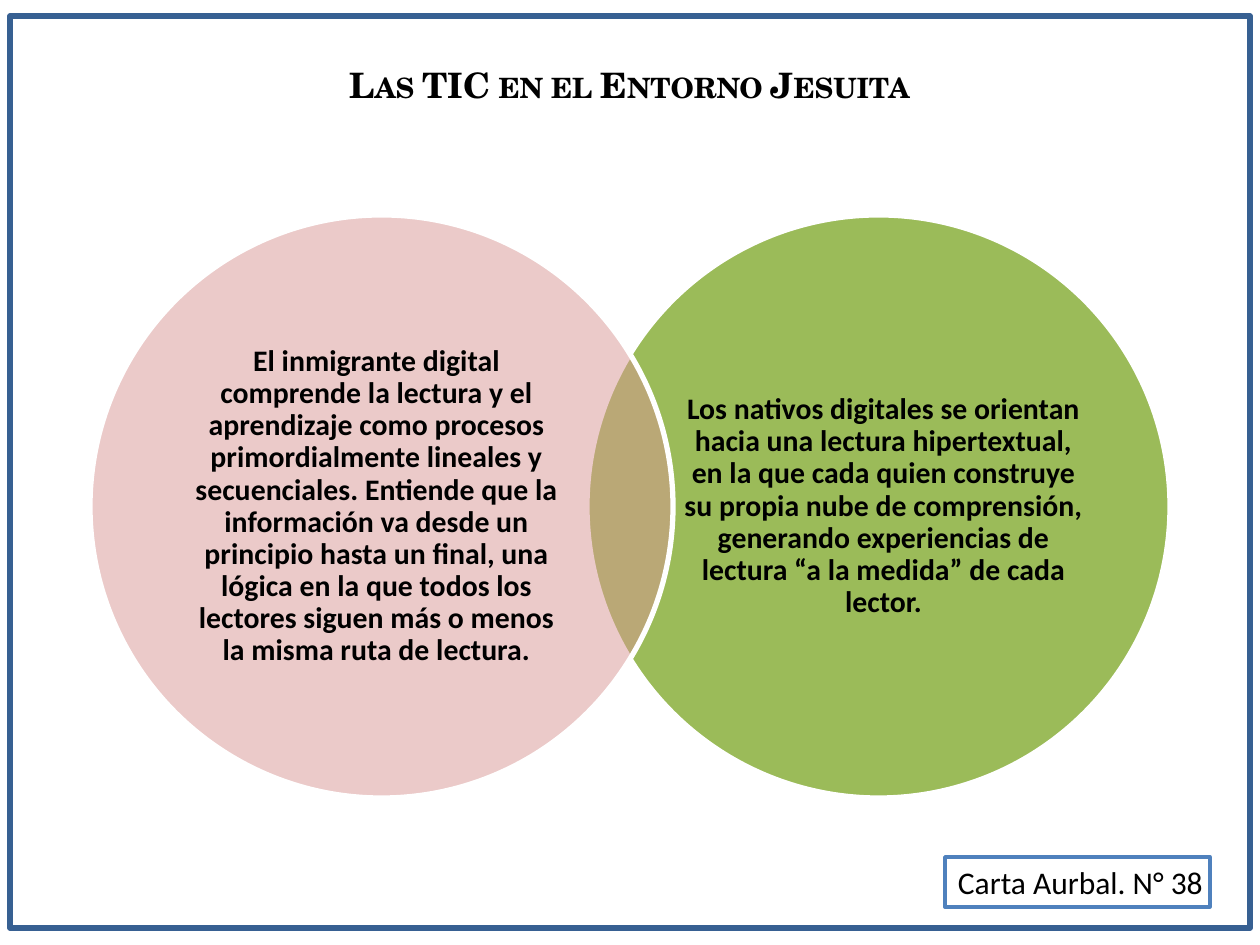
"""Build a slide contrasting two kinds of digital readers in overlapping circles."""
from dataclasses import dataclass

from lxml import etree
from pptx import Presentation
from pptx.dml.color import RGBColor
from pptx.enum.shapes import MSO_SHAPE
from pptx.enum.text import MSO_ANCHOR, PP_ALIGN
from pptx.oxml.ns import qn
from pptx.util import Pt

RECTANGLE, OVAL = MSO_SHAPE.RECTANGLE, MSO_SHAPE.OVAL
TOP, MIDDLE = MSO_ANCHOR.TOP, MSO_ANCHOR.MIDDLE
LEFT, CENTER = PP_ALIGN.LEFT, PP_ALIGN.CENTER
EMU_PER_PX = 914400 / 126


@dataclass(frozen=True)
class Theme:
    ink: str = "000000"
    paper: str = "FFFFFF"
    frame: str = "376092"
    source: str = "4F81BD"
    native: str = "9BBB59"
    immigrant: str = "D99694"
    title_font: str = "TeX Gyre Schola"
    body_font: str = "Calibri"
    title_size: int = 20
    source_size: int = 18
    circle_size: int = 17


THEME = Theme()
TITLE = "Las TIC en el Entorno Jesuita"
SOURCE = "Carta Aurbal. N° 38"
READERS = [
    {
        "column": 1,
        "color": THEME.native,
        "opacity": 100,
        "insets": (10, 5, 0, 5),
        "text": "Los nativos digitales se orientan hacia una lectura hipertextual, "
                "en la que cada quien construye su propia nube de comprensión, "
                "generando experiencias de lectura “a la medida” de cada lector.",
    },
    {
        "column": 0,
        "color": THEME.immigrant,
        "opacity": 50,
        "insets": (10, 10, 20, 10),
        "text": "El inmigrante digital comprende la lectura y el aprendizaje como "
                "procesos primordialmente lineales y secuenciales. Entiende que la "
                "información va desde un principio hasta un final, una lógica en la "
                "que todos los lectores siguen más o menos la misma ruta de lectura.",
    },
]

SLIDE_SIZE = (1260, 945)
TITLE_BOX = (19, 37, 1221, 161)
FRAME_BOX = (10, 16, 1240, 912)
SOURCE_BOX = (945, 857, 265, 50)
CIRCLE_LEFT, CIRCLE_TOP, DIAMETER, CIRCLE_STEP = 90, 215, 583, 497


def px(*lengths):
    return [round(length * EMU_PER_PX) for length in lengths]


def write(holder, text, size, font=THEME.body_font, bold=False, small_caps=False,
          align=CENTER, anchor=TOP, spacing=1.0, insets=(13, 6, 13, 6), wrap=True):
    frame = holder.text_frame
    frame.word_wrap = wrap
    frame.vertical_anchor = anchor
    (frame.margin_left, frame.margin_top,
     frame.margin_right, frame.margin_bottom) = px(*insets)
    paragraph = frame.paragraphs[0]
    paragraph.alignment = align
    paragraph.line_spacing = spacing
    run = paragraph.add_run()
    run.text = text
    run.font.name = font
    run.font.size = Pt(size)
    run.font.bold = bold
    run.font.color.rgb = RGBColor.from_string(THEME.ink)
    if small_caps:
        run.font._element.set("cap", "small")


def add_outlined(slide, preset, box, line, weight, fill=None, opacity=100):
    shape = slide.shapes.add_shape(preset, *px(*box))
    shape.shadow.inherit = False
    shape.line.color.rgb = RGBColor.from_string(line)
    shape.line.width = Pt(weight)
    if fill is None:
        shape.fill.background()
        return shape
    shape.fill.solid()
    shape.fill.fore_color.rgb = RGBColor.from_string(fill)
    if opacity < 100:
        color = shape._element.spPr.find(qn("a:solidFill")).find(qn("a:srgbClr"))
        etree.SubElement(color, qn("a:alpha")).set("val", str(opacity * 1000))
    return shape


def main():
    deck = Presentation()
    deck.slide_width, deck.slide_height = px(*SLIDE_SIZE)
    slide = deck.slides.add_slide(deck.slide_layouts[6])

    title = slide.shapes.add_textbox(*px(*TITLE_BOX))
    write(title, TITLE, THEME.title_size, font=THEME.title_font, bold=True,
          small_caps=True, spacing=1.5)
    add_outlined(slide, RECTANGLE, FRAME_BOX, THEME.frame, 3)
    source = add_outlined(slide, RECTANGLE, SOURCE_BOX, THEME.source, 2, THEME.paper)
    write(source, SOURCE, THEME.source_size, align=LEFT, wrap=False)

    for reader in READERS:
        left = CIRCLE_LEFT + reader["column"] * CIRCLE_STEP
        circle = add_outlined(slide, OVAL, (left, CIRCLE_TOP, DIAMETER, DIAMETER),
                              THEME.paper, 3, reader["color"], reader["opacity"])
        write(circle, reader["text"], THEME.circle_size, bold=True, anchor=MIDDLE,
              spacing=0.9, insets=reader["insets"])

    deck.save("out.pptx")


if __name__ == "__main__":
    main()
